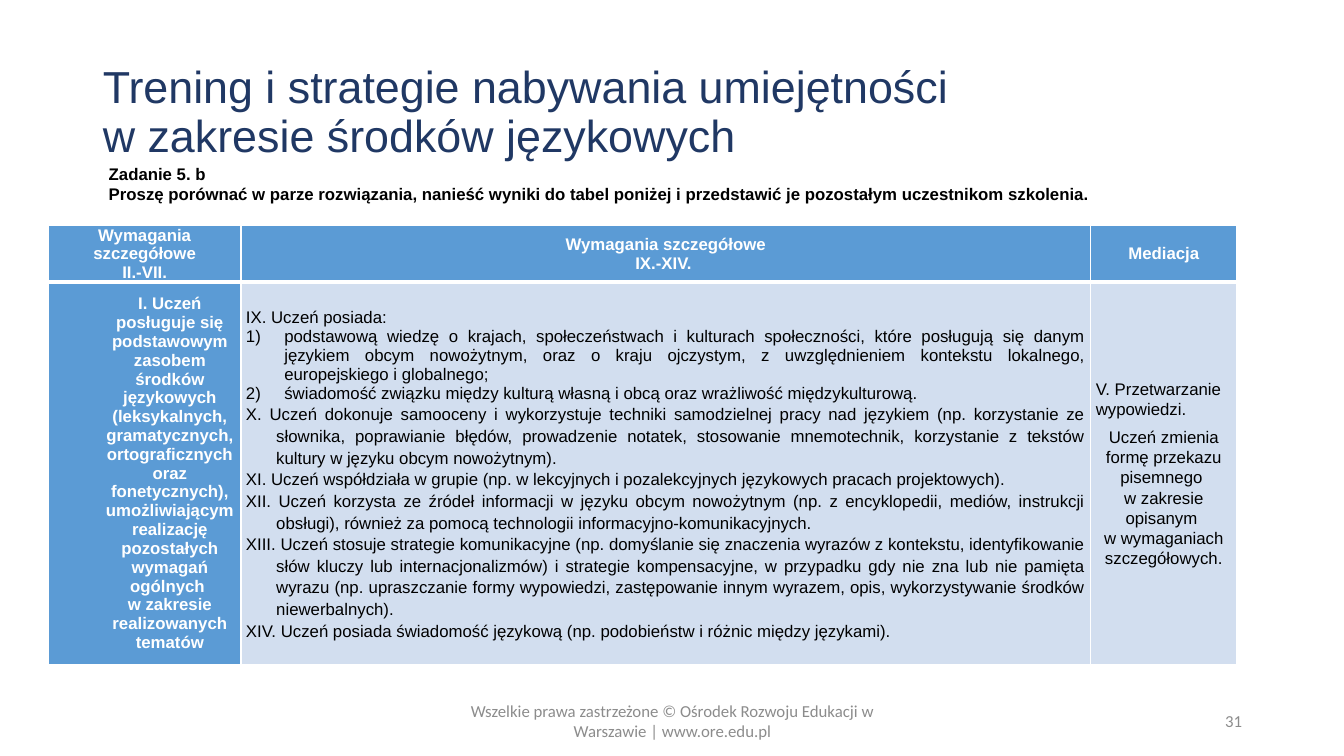
from dataclasses import dataclass, field

from lxml import etree
from pptx import Presentation
from pptx.dml.color import RGBColor
from pptx.enum.text import MSO_ANCHOR, MSO_AUTO_SIZE, PP_ALIGN
from pptx.oxml.ns import qn
from pptx.util import Inches, Pt

LEFT, CENTER, RIGHT, JUSTIFY = PP_ALIGN.LEFT, PP_ALIGN.CENTER, PP_ALIGN.RIGHT, PP_ALIGN.JUSTIFY
MIDDLE = MSO_ANCHOR.MIDDLE
NO_AUTOFIT = MSO_AUTO_SIZE.NONE
TITLE_ONLY = 5
WIDTH, HEIGHT = Inches(13.33), Inches(7.5)
COLORS = {
    "navy": "203864",
    "gray": "8C8C8C",
    "black": "000000",
    "white": "FFFFFF",
    "blue": "5B9BD5",
    "pale": "D2DEEF",
}
COLUMN_PERCENTS = (14.33, 63.23, 10.88)
ROW_PERCENTS = (6.93, 50.53)
FRAME_FORMAT = {"word_wrap": True, "auto_size": NO_AUTOFIT, "vertical_anchor": MIDDLE}
CELL_FORMAT = {
    "margin_left": Inches(0.05),
    "margin_right": Inches(0.05),
    "margin_top": 0,
    "margin_bottom": 0,
    "vertical_anchor": MIDDLE,
}


@dataclass(frozen=True)
class Box:
    left: float
    top: float
    width: float
    height: float

    def place(self) -> tuple[int, int, int, int]:
        return across(self.left), down(self.top), across(self.width), down(self.height)


@dataclass(frozen=True)
class Style:
    color: str
    size: int = 12
    name: str = "Arial"
    bold: bool = False


@dataclass(frozen=True)
class Line:
    text: str
    format: dict = field(default_factory=lambda: {"alignment": CENTER})
    margin: float = 0
    indent: float = 0
    numbered: bool = False


@dataclass(frozen=True)
class TextBlock:
    box: Box
    style: Style
    lines: list[Line]


@dataclass(frozen=True)
class TableCell:
    fill: str
    style: Style
    lines: list[Line]


def across(percent: float) -> int:
    return int(WIDTH * percent / 100)


def down(percent: float) -> int:
    return int(HEIGHT * percent / 100)


def apply_format(target, values: dict) -> None:
    for name, value in values.items():
        setattr(target, name, value)


def write_lines(text_frame, lines: list[Line], style: Style) -> None:
    for position, line in enumerate(lines):
        paragraph = text_frame.paragraphs[0] if position == 0 else text_frame.add_paragraph()
        paragraph.text = line.text
        apply_format(paragraph, line.format)
        properties = paragraph._p.get_or_add_pPr()
        properties.set("marL", str(Inches(line.margin)))
        properties.set("indent", str(Inches(line.indent)))
        if line.numbered:
            etree.SubElement(properties, qn("a:buAutoNum"), type="arabicParenR")
        for run in paragraph.runs:
            apply_format(run.font, {"name": style.name, "size": Pt(style.size), "bold": style.bold})
            run.font.color.rgb = RGBColor.from_string(COLORS[style.color])


def fill_block(shape, block: TextBlock) -> None:
    apply_format(shape, dict(zip(("left", "top", "width", "height"), block.box.place())))
    apply_format(shape.text_frame, FRAME_FORMAT)
    write_lines(shape.text_frame, block.lines, block.style)


def set_borders(cell, bottom_points: int) -> None:
    properties = cell._tc.get_or_add_tcPr()
    widths = {"lnL": 1, "lnR": 1, "lnT": 1, "lnB": bottom_points}
    for position, (tag, points) in enumerate(widths.items()):
        border = etree.Element(qn(f"a:{tag}"), w=str(Pt(points)))
        fill = etree.SubElement(border, qn("a:solidFill"))
        etree.SubElement(fill, qn("a:srgbClr"), val=COLORS["white"])
        properties.insert(position, border)


def draw_table(slide, box: Box, rows: list[list[TableCell]]) -> None:
    table = slide.shapes.add_table(len(rows), len(COLUMN_PERCENTS), *box.place()).table
    for column, percent in zip(table.columns, COLUMN_PERCENTS):
        column.width = across(percent)
    for row_index, (row, percent) in enumerate(zip(rows, ROW_PERCENTS)):
        table.rows[row_index].height = down(percent)
        for column_index, content in enumerate(row):
            cell = table.cell(row_index, column_index)
            apply_format(cell, CELL_FORMAT)
            cell.fill.solid()
            cell.fill.fore_color.rgb = RGBColor.from_string(COLORS[content.fill])
            set_borders(cell, 3 if row_index == 0 else 1)
            write_lines(cell.text_frame, content.lines, content.style)


PLAIN = {"alignment": LEFT}
SPACED = {"alignment": JUSTIFY, "line_spacing": 1.15}
MEDIATION = {"alignment": CENTER, "line_spacing": 1.07}
HEADING = Style("white", bold=True)
BODY = Style("black")
FOOTER = Style("gray", name="Calibri")

TITLE = TextBlock(Box(6.9, 5.33, 77.12, 19.33), Style("navy", 32), [
    Line("Trening i strategie nabywania umiejętności \nw zakresie środków językowych",
         {"alignment": LEFT, "line_spacing": 0.9}),
])
TEXT_BLOCKS = [
    TextBlock(Box(33.16, 92.67, 33.76, 5.33), FOOTER, [
        Line("Wszelkie prawa zastrzeżone © Ośrodek Rozwoju Edukacji w Warszawie | www.ore.edu.pl"),
    ]),
    TextBlock(Box(70.67, 92.67, 22.5, 5.33), FOOTER, [Line("31", {"alignment": RIGHT})]),
    TextBlock(Box(7.35, 20.93, 75.24, 6.67), Style("black", bold=True), [
        Line("Zadanie 5. b", PLAIN),
        Line("Proszę porównać w parze rozwiązania, nanieść wyniki do tabel poniżej "
             "i przedstawić je pozostałym uczestnikom szkolenia.", PLAIN),
    ]),
]
KNOWLEDGE = [
    "podstawową wiedzę o krajach, społeczeństwach i kulturach społeczności, które posługują się "
    "danym językiem obcym nowożytnym, oraz o kraju ojczystym, z uwzględnieniem kontekstu "
    "lokalnego, europejskiego i globalnego;",
    "świadomość związku między kulturą własną i obcą oraz wrażliwość międzykulturową.",
]
REQUIREMENTS = [
    "X. Uczeń dokonuje samooceny i wykorzystuje techniki samodzielnej pracy nad językiem "
    "(np. korzystanie ze słownika, poprawianie błędów, prowadzenie notatek, stosowanie "
    "mnemotechnik, korzystanie z tekstów kultury w języku obcym nowożytnym).",
    "XI. Uczeń współdziała w grupie (np. w lekcyjnych i pozalekcyjnych językowych pracach "
    "projektowych).",
    "XII. Uczeń korzysta ze źródeł informacji w języku obcym nowożytnym (np. z encyklopedii, "
    "mediów, instrukcji obsługi), również za pomocą technologii informacyjno-komunikacyjnych.",
    "XIII. Uczeń stosuje strategie komunikacyjne (np. domyślanie się znaczenia wyrazów "
    "z kontekstu, identyfikowanie słów kluczy lub internacjonalizmów) i strategie "
    "kompensacyjne, w przypadku gdy nie zna lub nie pamięta wyrazu (np. upraszczanie formy "
    "wypowiedzi, zastępowanie innym wyrazem, opis, wykorzystywanie środków niewerbalnych).",
    "XIV. Uczeń posiada świadomość językową (np. podobieństw i różnic między językami).",
]
TABLE_ROWS = [
    [TableCell("blue", HEADING, [Line(text) for text in texts]) for texts in (
        ("Wymagania szczegółowe", "II.-VII."),
        ("Wymagania szczegółowe", "IX.-XIV. "),
        ("Mediacja",),
    )],
    [
        TableCell("blue", HEADING, [Line(text, margin=0.5) for text in (
            "I. Uczeń posługuje się podstawowym zasobem środków językowych (leksykalnych, "
            "gramatycznych, ortograficznych oraz fonetycznych), umożliwiającym realizację "
            "pozostałych wymagań ogólnych ",
            "w zakresie realizowanych tematów",
        )]),
        TableCell("pale", BODY, [
            Line("IX. Uczeń posiada:", SPACED, 0.59, -0.59),
            *(Line(text, {"alignment": JUSTIFY}, 0.38, -0.38, True) for text in KNOWLEDGE),
            *(Line(text, SPACED, 0.3, -0.3) for text in REQUIREMENTS),
        ]),
        TableCell("pale", BODY, [
            Line("V. Przetwarzanie wypowiedzi.", {**MEDIATION, **PLAIN, "space_after": Pt(6)}),
            *(Line(text, MEDIATION) for text in (
                "Uczeń zmienia formę przekazu pisemnego ",
                "w zakresie opisanym ",
                "w wymaganiach szczegółowych.",
            )),
        ]),
    ],
]


def main() -> None:
    presentation = Presentation()
    apply_format(presentation, {"slide_width": WIDTH, "slide_height": HEIGHT})
    slide = presentation.slides.add_slide(presentation.slide_layouts[TITLE_ONLY])
    fill_block(slide.shapes.title, TITLE)
    for block in TEXT_BLOCKS:
        fill_block(slide.shapes.add_textbox(*block.box.place()), block)
    draw_table(slide, Box(3.6, 29.87, sum(COLUMN_PERCENTS), sum(ROW_PERCENTS)), TABLE_ROWS)
    presentation.save("out.pptx")


if __name__ == "__main__":
    main()
